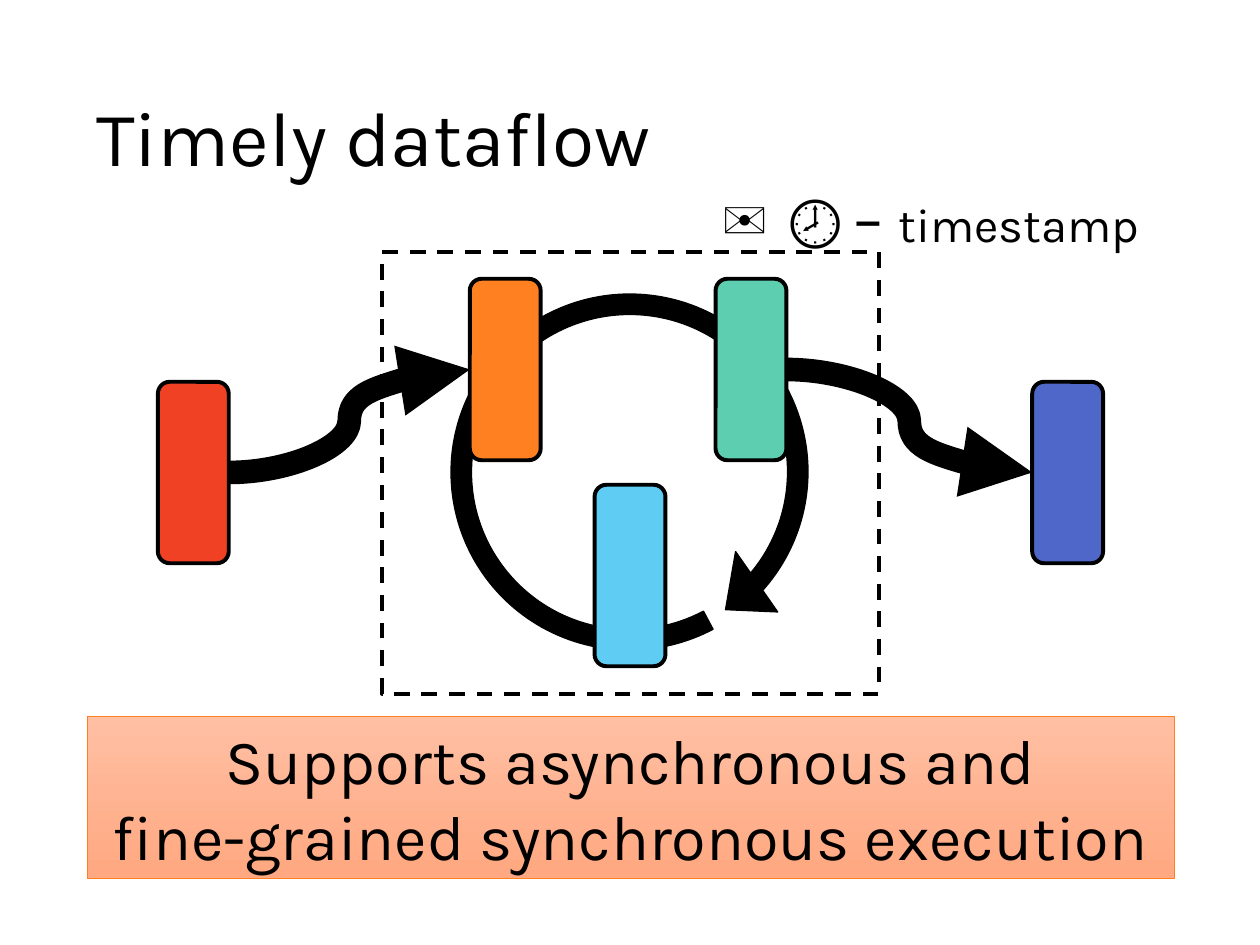
from dataclasses import dataclass

from lxml import etree
from pptx import Presentation
from pptx.dml.color import RGBColor as RGB
from pptx.enum.dml import MSO_LINE as DASH
from pptx.enum.shapes import MSO_CONNECTOR as CONN, MSO_SHAPE as SHAPE
from pptx.enum.text import MSO_ANCHOR as ANCHOR, MSO_AUTO_SIZE as FIT, PP_ALIGN as ALIGN
from pptx.oxml.ns import qn
from pptx.util import Inches, Pt


@dataclass(frozen=True)
class Theme:
    font: str = "Karla"
    ink: str = "000000"
    accent: str = "FF8021"
    banner: tuple = ("FFBFA3", "FFA881")
    title: float = 58.7
    large: float = 48
    medium: float = 36
    outline: float = 3
    hairline: float = 0.5
    flow: float = 18


T = Theme()
TITLE = "Timely dataflow"
BANNER = "Supports asynchronous and\nfine-grained synchronous execution"
LABELS = [
    (7.42, 0.92, ALIGN.CENTER, True, [("✉", T.large)]),
    (8.24, 5.28, ALIGN.LEFT, False,
     [("🕗", T.large), (" ", T.medium), ("– ", T.large), ("timestamp", T.medium)]),
]
LABEL_TOP, LABEL_H = 1.85, 0.91
NODE_W, NODE_H = 0.75, 1.92
NODES = {
    "input": (1.67, 4.04, "F14124"),
    "ingress": (4.97, 2.95, T.accent),
    "egress": (7.57, 2.95, "5DCEAF"),
    "feedback": (6.29, 5.13, "5ECCF3"),
    "output": (10.92, 4.04, "4E67C8"),
}
FLOWS = [("input", "ingress"), ("egress", "output")]
LOOP = (4.49, 2.83, 4.34, 4.33)
LOOP_ADJ = (0.05, 8.58, 32.76, 45.49, 0.09)
LOOP_TURN = 346.2
SCOPE = (4.04, 2.67, 5.26, 4.67)
TITLE_BOX = (0.92, 0.53, 11.5, 1.93)
BANNER_BOX = (0.92, 7.58, 11.5, 1.72)
RIGHT, LEFT = 3, 1


def style_font(font, size):
    font.name = T.font
    font.size = Pt(size)
    font.color.rgb = RGB.from_string(T.ink)


def set_line(line, width, color=T.ink):
    line.width = Pt(width)
    line.color.rgb = RGB.from_string(color)


def add_shape(slide, kind, box, fill=None, width=T.outline, color=T.ink):
    sp = slide.shapes.add_shape(kind, *map(Inches, box))
    sp.shadow.inherit = False
    if fill:
        sp.fill.solid()
        sp.fill.fore_color.rgb = RGB.from_string(fill)
    else:
        sp.fill.background()
    set_line(sp.line, width, color)
    return sp


def add_flow(slide, source, target):
    c = slide.shapes.add_connector(CONN.CURVE, 0, 0, 0, 0)
    c.begin_connect(source, RIGHT)
    c.end_connect(target, LEFT)
    set_line(c.line, T.flow)
    etree.SubElement(c.line._get_or_add_ln(), qn("a:tailEnd"), type="triangle")
    etree.SubElement(c._element.spPr, qn("a:effectLst"))


def add_title(slide):
    sp = slide.shapes.title
    sp.left, sp.top, sp.width, sp.height = map(Inches, TITLE_BOX)
    tf = sp.text_frame
    tf.auto_size = FIT.NONE
    tf.vertical_anchor = ANCHOR.MIDDLE
    p = tf.paragraphs[0]
    p.text = TITLE
    p.alignment = ALIGN.LEFT
    p.line_spacing = 0.9
    style_font(p.font, T.title)


def add_banner(slide):
    sp = add_shape(slide, SHAPE.RECTANGLE, BANNER_BOX, width=T.hairline, color=T.accent)
    sp.fill.gradient()
    sp.fill.gradient_angle = 270
    for stop, color in zip(sp.fill.gradient_stops, T.banner):
        stop.color.rgb = RGB.from_string(color)
    tf = sp.text_frame
    tf.word_wrap = True
    tf.auto_size = FIT.SHAPE_TO_FIT_TEXT
    tf.vertical_anchor = ANCHOR.MIDDLE
    p = tf.paragraphs[0]
    p.text = BANNER.replace("\n", "\v")
    p.alignment = ALIGN.CENTER
    style_font(p.font, T.large)


def add_label(slide, left, width, align, bold, parts):
    sp = slide.shapes.add_textbox(*map(Inches, (left, LABEL_TOP, width, LABEL_H)))
    tf = sp.text_frame
    tf.word_wrap = True
    tf.auto_size = FIT.SHAPE_TO_FIT_TEXT
    p = tf.paragraphs[0]
    p.alignment = align
    for text, size in parts:
        r = p.add_run()
        r.text = text
        r.font.bold = bold
        style_font(r.font, size)


def main():
    prs = Presentation()
    prs.slide_width, prs.slide_height = Inches(13.33), Inches(10)
    s = prs.slides.add_slide(prs.slide_layouts[5])
    add_title(s)
    loop = add_shape(s, SHAPE.CIRCULAR_ARROW, LOOP, T.ink, 1)
    loop.rotation = LOOP_TURN
    for i, value in enumerate(LOOP_ADJ):
        loop.adjustments[i] = value
    nodes = {
        name: add_shape(s, SHAPE.ROUNDED_RECTANGLE, (x, y, NODE_W, NODE_H), fill)
        for name, (x, y, fill) in NODES.items()
    }
    for source, target in FLOWS:
        add_flow(s, nodes[source], nodes[target])
    scope = add_shape(s, SHAPE.RECTANGLE, SCOPE)
    scope.line.dash_style = DASH.DASH
    add_banner(s)
    for label in LABELS:
        add_label(s, *label)
    prs.save("out.pptx")


if __name__ == "__main__":
    main()
